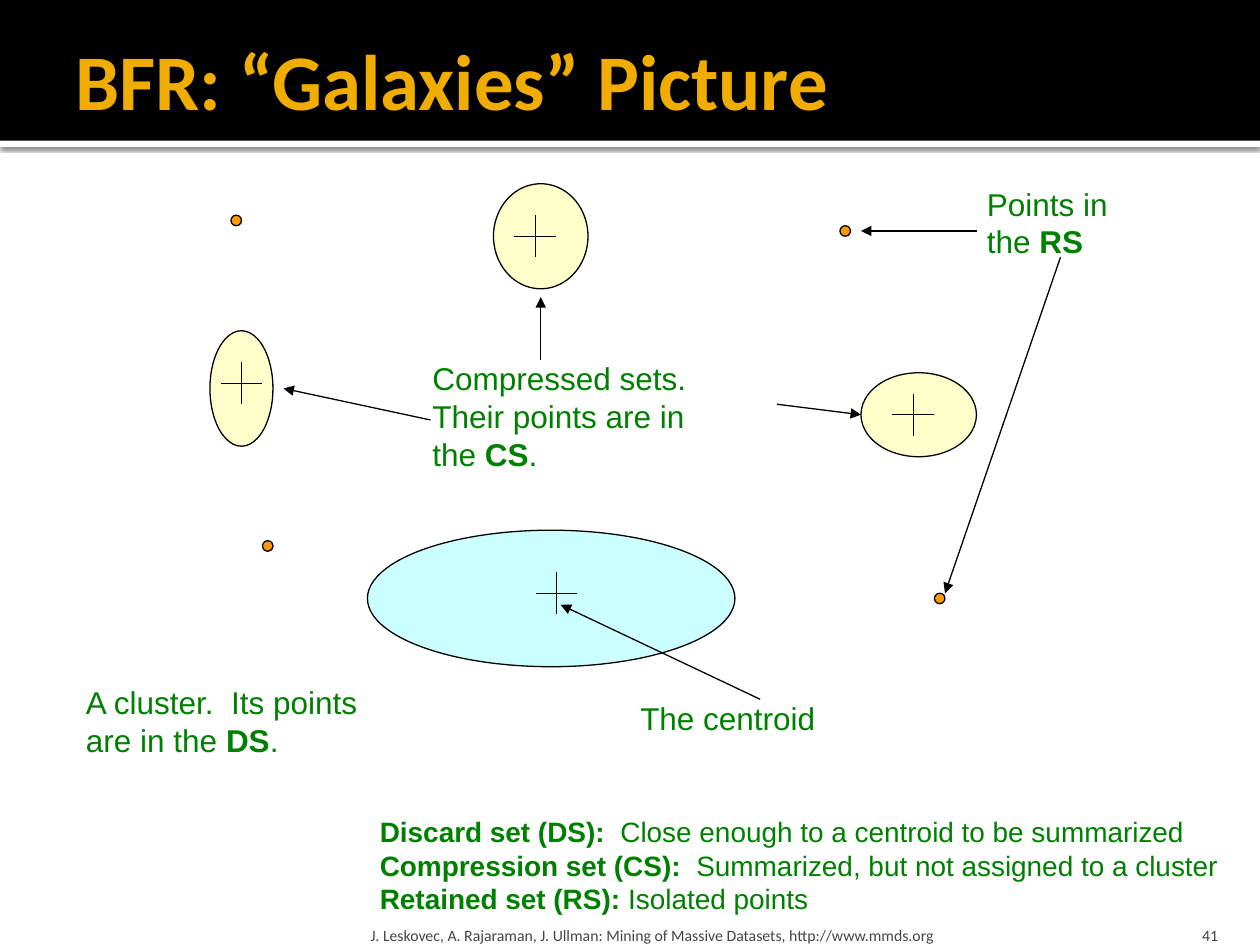
from dataclasses import dataclass

from lxml import etree
from pptx import Presentation
from pptx import util as u
from pptx.dml.color import RGBColor
from pptx.enum import shapes, text
from pptx.oxml import ns


@dataclass(frozen=True)
class Theme:
    title: str = "F0AD00"
    footer: str = "454545"
    label: str = "008000"
    ink: str = "000000"
    paper: str = "FFFFFF"
    cluster: str = "CCFFFF"
    compressed: str = "FFFF99"
    retained: str = "FF9900"
    head_font: str = "Calibri"
    body_font: str = "Arial"
    title_size: int = 45
    label_size: int = 18
    legend_size: int = 16
    footer_size: int = 9
    line: float = 0.75


T = Theme()
COLS, ROWS = 120, 90  # grid of twelve cells to the inch
CELL = u.Inches(10) // COLS
MIDDLE, BOTTOM = text.MSO_ANCHOR.MIDDLE, text.MSO_ANCHOR.BOTTOM


def cells(*values):
    return [u.Emu(round(v * CELL)) for v in values]


def rgb(value):
    return RGBColor.from_string(value)


def sub(parent, tag, **attrs):
    return etree.SubElement(parent, ns.qn(tag), attrs)


def add_filled(slide, kind, box, fill, outlined=True, alpha=None):
    sp = slide.shapes.add_shape(kind, *cells(*box))
    sp.shadow.inherit = False
    sp.fill.solid()
    sp.fill.fore_color.rgb = rgb(fill)
    if alpha:
        color = sp.fill._xPr.find(".//" + ns.qn("a:srgbClr"))
        sub(color, "a:alpha", val=str(alpha * 1000))
    if outlined:
        sp.line.color.rgb = rgb(T.ink)
        sp.line.width = u.Pt(T.line)
    else:
        sp.line.fill.background()
    return sp


def add_ellipse(slide, box, fill, alpha=None):
    return add_filled(slide, shapes.MSO_SHAPE.OVAL, box, fill, alpha=alpha)


def add_band(slide, top, height, fill):
    box = (0, top, COLS, height)
    return add_filled(slide, shapes.MSO_SHAPE.RECTANGLE, box, fill, outlined=False)


def add_shadow(sp):
    effects = sp.element.spPr.find(ns.qn("a:effectLst"))
    shadow = sub(effects, "a:outerShdw", blurRad=str(u.Pt(2.5)),
                 dist=str(u.Pt(0.8)), dir="5400000", rotWithShape="0")
    color = sub(shadow, "a:srgbClr", val=T.ink)
    sub(color, "a:alpha", val="60000")


def add_line(slide, start, end, arrow=False):
    line = slide.shapes.add_connector(
        shapes.MSO_CONNECTOR.STRAIGHT, *cells(*start, *end))
    line.line.color.rgb = rgb(T.ink)
    line.line.width = u.Pt(T.line)
    if arrow:
        sub(line.line._get_or_add_ln(), "a:tailEnd", type="triangle")
    sub(line.element.spPr, "a:effectLst")


def add_cross(slide, x, y, arm=2):
    add_line(slide, (x, y - arm), (x, y + arm))
    add_line(slide, (x - arm, y), (x + arm, y))


def add_text(slide, box, lines, size=T.label_size, color=T.label, font=T.body_font,
             wrap=True, anchor=None, align=None, insets=(0.1, 0.05, 0.1, 0.05)):
    """Each line is a string; parts between asterisks are bold."""
    tf = slide.shapes.add_textbox(*cells(*box)).text_frame
    tf.word_wrap = wrap
    tf.vertical_anchor = anchor
    (tf.margin_left, tf.margin_top,
     tf.margin_right, tf.margin_bottom) = map(u.Inches, insets)
    for i, line in enumerate(lines):
        p = tf.add_paragraph() if i else tf.paragraphs[0]
        p.alignment = align
        for j, part in enumerate(line.split("*")):
            if not part:
                continue
            r = p.add_run()
            r.text = part
            r.font.bold = j % 2 == 1
            r.font.size = u.Pt(size)
            r.font.name = font
            r.font.color.rgb = rgb(color)


def add_frame(slide):
    # Header band and title
    add_shadow(add_band(slide, 13.4, 0.6, T.paper))
    add_band(slide, 0, 13.4, T.ink)
    add_text(slide, (6, 2, 108, 11), ["*BFR: “Galaxies” Picture*"], T.title_size,
             T.title, T.head_font, anchor=MIDDLE, insets=(0.1, 0.05, 0.05, 0.05))
    # Footer and page number
    footer = dict(size=T.footer_size, color=T.footer, font=T.head_font, anchor=BOTTOM)
    add_text(slide, (34.7, 86.4, 72.2, 3.6),
             ["J. Leskovec, A. Rajaraman, J. Ullman: Mining of Massive Datasets, "
              "http://www.mmds.org"], insets=(0.05, 0.05, 0.05, 0), **footer)
    add_text(slide, (107.6, 86.4, 9.6, 3.6), ["41"], align=text.PP_ALIGN.RIGHT,
             insets=(0.1, 0.05, 0.1, 0), **footer)


def add_cluster(slide):
    add_ellipse(slide, (35, 50.5, 35, 13), T.cluster)
    add_text(slide, (7, 64.5, 28.5, 8.5),
             ["A cluster.  Its points", "are in the *DS*."], wrap=False)
    add_cross(slide, 53, 56.5)
    add_text(slide, (59.8, 66, 19.2, 4.8), ["The centroid"], wrap=False)
    add_line(slide, (72.4, 66.6), (53.4, 57.6), arrow=True)


def add_compressed_sets(slide):
    # Box of each set, then the centre of its cross
    sets = [((20, 31.5, 6, 11), (23, 36.5)),
            ((82, 35.5, 11, 8), (87, 39.5)),
            ((47, 17.5, 9, 10), (51, 22.5))]
    for box, centre in sets:
        add_ellipse(slide, box, T.compressed, alpha=50)
        add_cross(slide, *centre)
    add_text(slide, (40, 33.6, 26.9, 12.1),
             ["Compressed sets.", "Their points are in", "the *CS*."], wrap=False)
    for start, end in [((41, 40), (27, 37)),
                       ((51.5, 34.3), (51.5, 28.3)),
                       ((74, 38.5), (82, 39.5))]:
        add_line(slide, start, end, arrow=True)


def add_retained_points(slide):
    for x, y in [(22, 20.5), (25, 51.5), (89, 56.5), (80, 21.5)]:
        add_ellipse(slide, (x, y, 1, 1), T.retained)
    add_text(slide, (92.8, 17, 14, 8.5), ["Points in", "the *RS*"], wrap=False)
    add_line(slide, (93, 22), (82, 22), arrow=True)
    add_line(slide, (101, 24.5), (90, 56.5), arrow=True)


def add_legend(slide):
    add_text(slide, (35, 77, 84, 10.9),
             ["*Discard set (DS):*  Close enough to a centroid to be summarized",
              "*Compression set (CS):*  Summarized, but not assigned to a cluster",
              "*Retained set (RS):* Isolated points"], T.legend_size)


def main():
    prs = Presentation()
    prs.slide_width, prs.slide_height = cells(COLS, ROWS)
    slide = prs.slides.add_slide(prs.slide_layouts[6])
    add_frame(slide)
    add_cluster(slide)
    add_compressed_sets(slide)
    add_retained_points(slide)
    add_legend(slide)
    prs.save("out.pptx")


if __name__ == "__main__":
    main()
